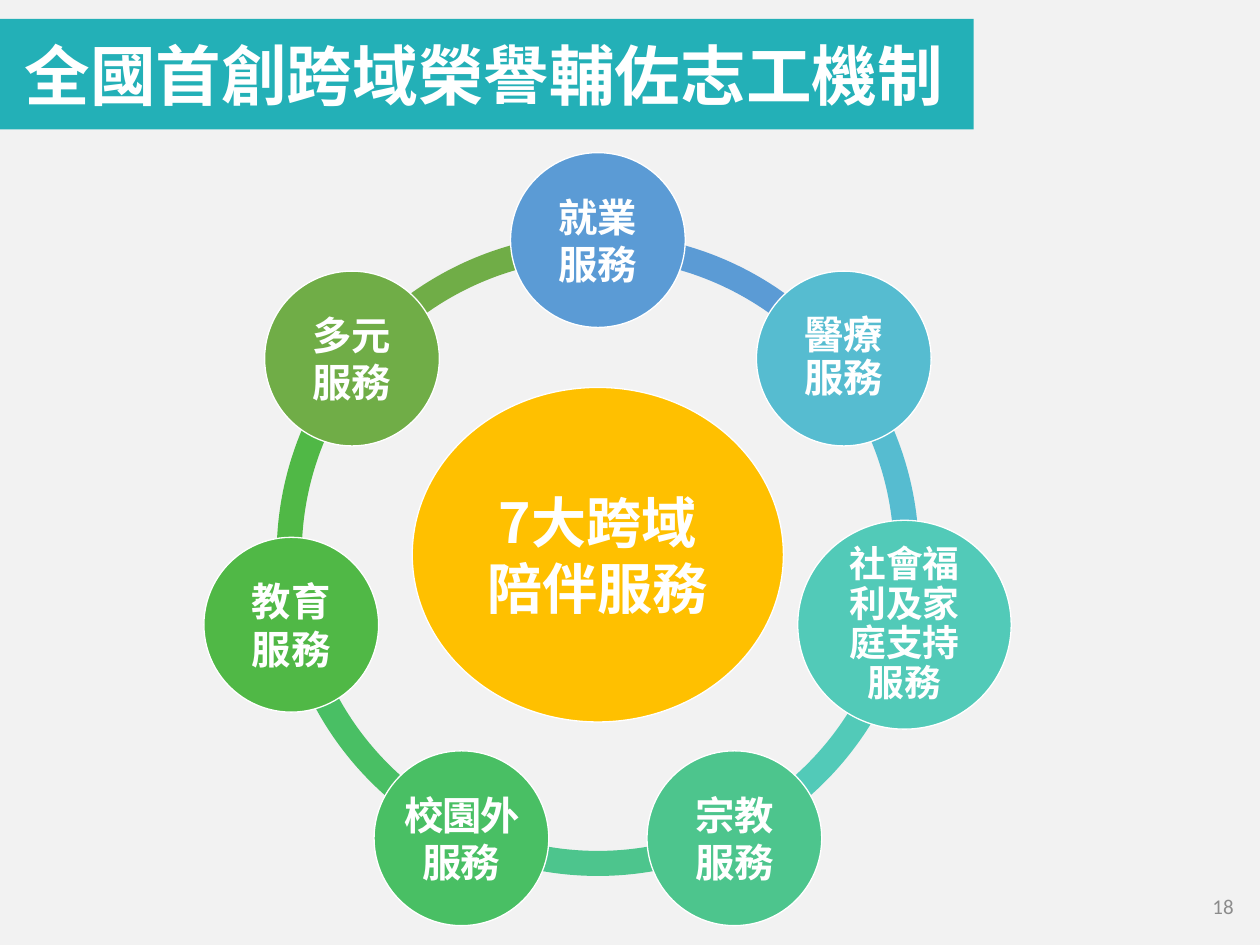
from dataclasses import dataclass
from math import cos, radians, sin

from lxml.etree import SubElement
from pptx import Presentation
from pptx.dml.color import RGBColor
from pptx.enum.shapes import MSO_SHAPE
from pptx.enum.text import MSO_ANCHOR, PP_ALIGN
from pptx.oxml.ns import qn
from pptx.util import Inches, Pt


@dataclass(frozen=True)
class Theme:
    background: str = "F2F2F2"
    banner: str = "23B0B7"
    hub: str = "FFC000"
    white: str = "FFFFFF"
    muted: str = "8C8C8C"
    cjk: str = "Noto Sans CJK SC"
    latin: str = "Calibri"
    title_size: int = 50
    hub_size: int = 42
    node_size: int = 30
    small_node_size: int = 28
    number_size: int = 16


@dataclass(frozen=True)
class Service:
    label: str
    color: str
    width: float = 1.85
    height: float = 1.85
    size: int = Theme.node_size
    line_spacing: object = None
    tracking: float = 0


THEME = Theme()
CENTER_X, CENTER_Y = 6.33, 5.87
RING_SIZE, NODE_RADIUS = 6.8, 3.33
ARC_THICKNESS = 0.039  # share of the ring size

# Clockwise from the top
SERVICES = [
    Service("就業服務", "5B9BD5"),
    Service("醫療服務", "56BCD0", line_spacing=0.9),
    Service("社會福利及家庭支持服務", "52CAB8", 2.26, 2.21,
            THEME.small_node_size, Pt(30)),
    Service("宗教服務", "4DC58D"),
    Service("校園外服務", "49BF64", tracking=-1.1),
    Service("教育服務", "50B846"),
    Service("多元服務", "70AD47"),
]
STEP = 360 / len(SERVICES)


def add_filled(s, kind, left, top, width, height, color, outlined=False):
    sp = s.shapes.add_shape(kind, Inches(left), Inches(top),
                            Inches(width), Inches(height))
    sp.shadow.inherit = False
    sp.fill.solid()
    sp.fill.fore_color.rgb = RGBColor.from_string(color)
    if outlined:
        sp.line.color.rgb = RGBColor.from_string(THEME.white)
        sp.line.width = Pt(1)
    else:
        sp.line.fill.background()
    return sp


def set_text(sp, text, size, color=THEME.white, font=THEME.cjk, bold=True,
             align=PP_ALIGN.CENTER, margins=(0.04,) * 4):
    tf = sp.text_frame
    tf.text = text
    tf.word_wrap = True
    tf.vertical_anchor = MSO_ANCHOR.MIDDLE
    (tf.margin_left, tf.margin_top,
     tf.margin_right, tf.margin_bottom) = map(Inches, margins)
    p = tf.paragraphs[0]
    p.alignment = align
    r = p.runs[0]
    r.font.size = Pt(size)
    r.font.bold = bold
    r.font.color.rgb = RGBColor.from_string(color)
    r.font.name = font
    # East Asian characters take their own typeface element
    SubElement(r.font._element, qn("a:ea"), typeface=font)
    return p


def add_circle(s, x, y, width, height, color, text, size, margin):
    sp = add_filled(s, MSO_SHAPE.OVAL, x - width / 2, y - height / 2,
                    width, height, color, outlined=True)
    return set_text(sp, text, size, margins=(margin,) * 4)


def add_arc(s, index, color):
    arc = add_filled(s, MSO_SHAPE.BLOCK_ARC, CENTER_X - RING_SIZE / 2,
                     CENTER_Y - RING_SIZE / 2, RING_SIZE, RING_SIZE, color)
    start = 270 + index * STEP
    # Angles are stored in 60000ths of a degree, scaled by 100000
    arc.adjustments[0] = start % 360 * 0.6
    arc.adjustments[1] = (start + STEP) % 360 * 0.6
    arc.adjustments[2] = ARC_THICKNESS


def add_node(s, index, service):
    angle = radians(index * STEP)
    p = add_circle(s, CENTER_X + NODE_RADIUS * sin(angle),
                   CENTER_Y - NODE_RADIUS * cos(angle),
                   service.width, service.height, service.color,
                   service.label, service.size, 0.04)
    if service.line_spacing:
        p.line_spacing = service.line_spacing
    if service.tracking:
        p.runs[0].font._element.set("spc", str(round(service.tracking * 100)))


def add_title(s, text):
    banner = add_filled(s, MSO_SHAPE.RECTANGLE, -1.83, 0.2, 12.14, 1.17,
                        THEME.banner)
    set_text(banner, text, THEME.title_size, align=PP_ALIGN.LEFT,
             margins=(2.09, 0.05, 0.1, 0.05))


def add_page_number(s, number):
    box = s.shapes.add_textbox(Inches(10.16), Inches(9.32),
                               Inches(3), Inches(0.53))
    set_text(box, number, THEME.number_size, THEME.muted, THEME.latin,
             bold=False, align=PP_ALIGN.RIGHT, margins=(0.1, 0.05, 0.1, 0.05))


def main():
    prs = Presentation()
    prs.slide_width, prs.slide_height = Inches(13.34), Inches(10)
    s = prs.slides.add_slide(prs.slide_layouts[6])
    s.background.fill.solid()
    s.background.fill.fore_color.rgb = RGBColor.from_string(THEME.background)

    # Banner and page number
    add_title(s, "全國首創跨域榮譽輔佐志工機制")
    add_page_number(s, "18")

    # Ring segments, then the hub and the services on top
    for i, service in reversed(list(enumerate(SERVICES))):
        add_arc(s, i, service.color)
    add_circle(s, CENTER_X, CENTER_Y, 3.93, 3.54, THEME.hub,
               "7大跨域陪伴服務", THEME.hub_size, 0.06)
    for i, service in enumerate(SERVICES):
        add_node(s, i, service)

    prs.save("out.pptx")


if __name__ == "__main__":
    main()
